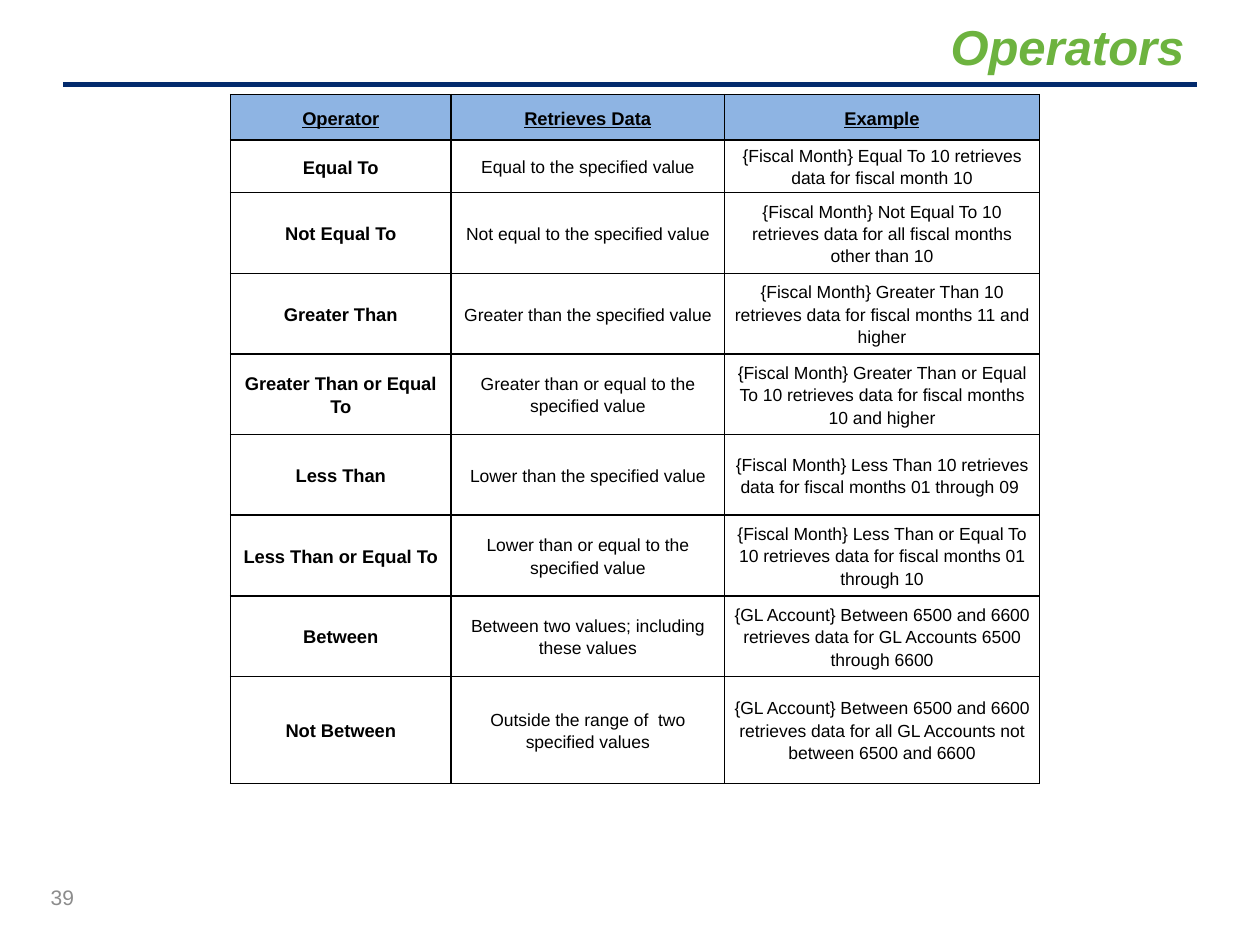
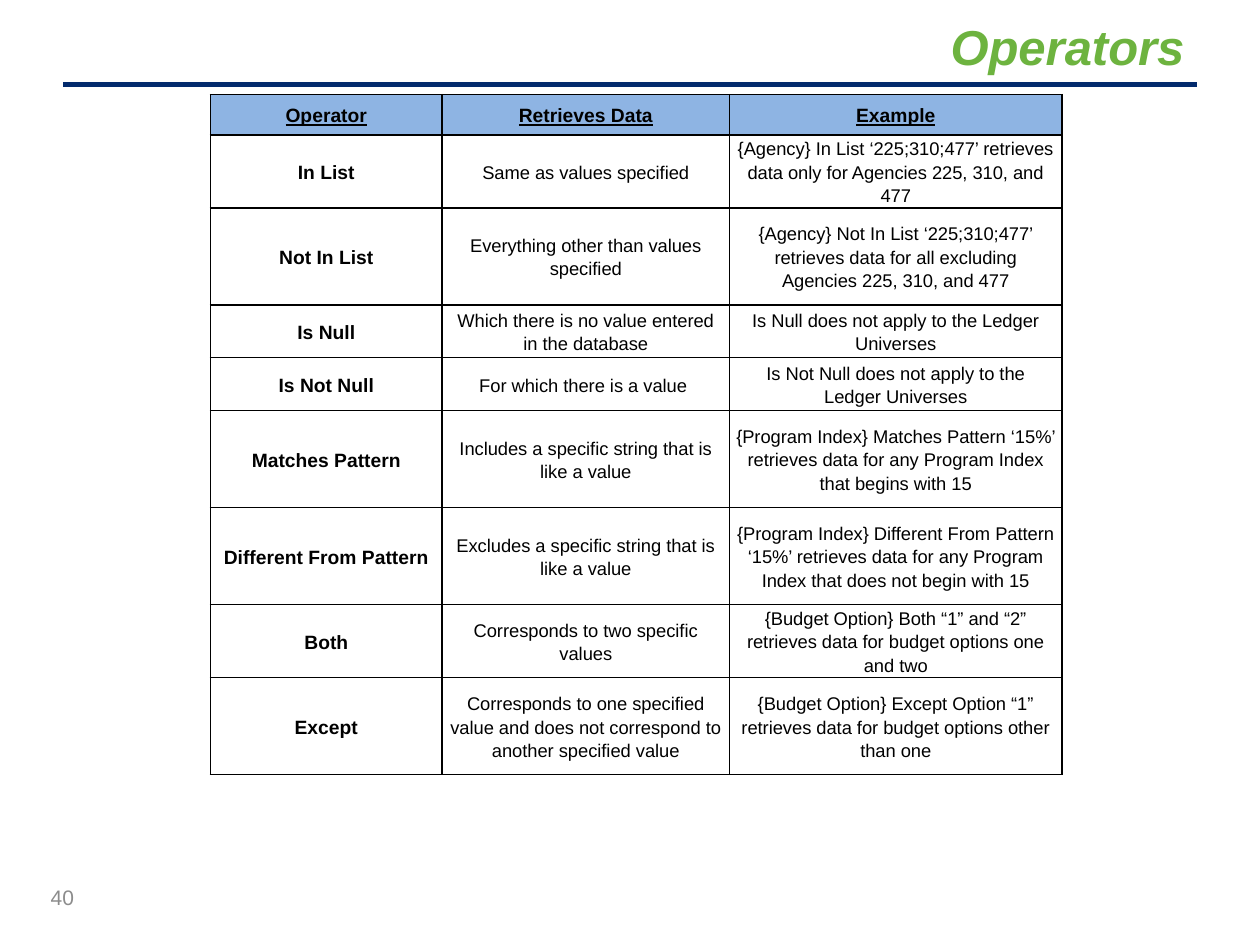
"""Builds two slides that list query operators in tables."""
from lxml import etree
from pptx import Presentation
from pptx.dml.color import RGBColor
from pptx.enum.shapes import MSO_CONNECTOR
from pptx.enum.text import MSO_ANCHOR, PP_ALIGN
from pptx.oxml.ns import qn
from pptx.util import Inches, Pt

LINE = MSO_CONNECTOR.STRAIGHT
TOP, MIDDLE = MSO_ANCHOR.TOP, MSO_ANCHOR.MIDDLE
CENTER, RIGHT = PP_ALIGN.CENTER, PP_ALIGN.RIGHT
NAVY, GREEN, BLUE, GRAY, BLACK = "032B6D", "6DB33F", "8EB4E3", "8C8C8C", "000000"
HEAD = ("Operator", "Retrieves Data", "Example")

PAGES = [
    {
        "num": "39", "left": 1.83, "size": 10,
        "cols": [1.75, 2.17, 2.5],
        "rows": [0.36, 0.42] + [0.64] * 6 + [0.85],
        "body": [
            ("Equal To", "Equal to the specified value",
             "{Fiscal Month} Equal To 10 retrieves data for fiscal month 10"),
            ("Not Equal To", "Not equal to the specified value",
             "{Fiscal Month} Not Equal To 10 retrieves data for all fiscal months other than 10"),
            ("Greater Than", "Greater than the specified value",
             "{Fiscal Month} Greater Than 10 retrieves data for fiscal months 11 and higher"),
            ("Greater Than or Equal To", "Greater than or equal to the specified value",
             "{Fiscal Month} Greater Than or Equal To 10 retrieves data for fiscal months 10 and higher"),
            ("Less Than", "Lower than the specified value",
             "{Fiscal Month} Less Than 10 retrieves data for fiscal months 01 through 09 "),
            ("Less Than or Equal To", "Lower than or equal to the specified value",
             "{Fiscal Month} Less Than or Equal To 10 retrieves data for fiscal months 01 through 10"),
            ("Between", "Between two values; including these values",
             "{GL Account} Between 6500 and 6600 retrieves data for GL Accounts 6500 through 6600"),
            ("Not Between", "Outside the range of  two specified values",
             "{GL Account} Between 6500 and 6600 retrieves data for all GL Accounts "
             "not between 6500 and 6600"),
        ],
    },
    {
        "num": "40", "left": 1.67, "size": 10.5,
        "cols": [1.84, 2.28, 2.64],
        "rows": [0.32, 0.58, 0.77, 0.42, 0.42, 0.77, 0.77, 0.58, 0.77],
        "body": [
            ("In List", "Same as values specified",
             "{Agency} In List ‘225;310;477’ retrieves data only for Agencies 225, 310, and 477"),
            ("Not In List", "Everything other than values specified",
             "{Agency} Not In List ‘225;310;477’ retrieves data for all excluding "
             "Agencies 225, 310, and 477"),
            ("Is Null", "Which there is no value entered in the database",
             "Is Null does not apply to the Ledger Universes"),
            ("Is Not Null", "For which there is a value ",
             "Is Not Null does not apply to the Ledger Universes"),
            ("Matches Pattern", "Includes a specific string that is like a value",
             "{Program Index} Matches Pattern ‘15%’ retrieves data for any Program Index "
             "that begins with 15"),
            ("Different From Pattern", "Excludes a specific string that is like a value",
             "{Program Index} Different From Pattern ‘15%’ retrieves data for any Program Index "
             "that does not begin with 15"),
            ("Both", "Corresponds to two specific values",
             "{Budget Option} Both “1” and “2” retrieves data for budget options one and two"),
            ("Except",
             "Corresponds to one specified value and does not correspond to another specified value",
             "{Budget Option} Except Option “1” retrieves data for budget options other than one"),
        ],
    },
]


def rgb(code):
    return RGBColor.from_string(code)


def write(frame, text, size, color, align, anchor):
    frame.word_wrap = True
    frame.vertical_anchor = anchor
    para = frame.paragraphs[0]
    para.text = text
    para.alignment = align
    para.font.name = "Arial"
    para.font.size = Pt(size)
    para.font.color.rgb = rgb(color)
    return para


prs = Presentation()
prs.slide_width, prs.slide_height = Inches(10), Inches(7.5)

for page in PAGES:
    slide = prs.slides.add_slide(prs.slide_layouts[5])
    shapes = slide.shapes

    rule = shapes.add_connector(LINE, Inches(0.5), Inches(0.67), Inches(9.5), Inches(0.67))
    rule.line.color.rgb = rgb(NAVY)
    rule.line.width = Pt(3)
    etree.SubElement(rule._element.spPr, qn("a:effectLst"))

    title = shapes.title
    title.left, title.top = Inches(0.5), Inches(0.08)
    title.width, title.height = Inches(9), Inches(0.75)
    para = write(title.text_frame, "Operators", 28, GREEN, RIGHT, TOP)
    para.font.bold = para.font.italic = True

    lines = [HEAD] + page["body"]
    table = shapes.add_table(
        len(lines), len(HEAD), Inches(page["left"]), Inches(0.75),
        Inches(sum(page["cols"])), Inches(sum(page["rows"]))).table
    table.first_row = table.horz_banding = False
    for col, width in zip(table.columns, page["cols"]):
        col.width = Inches(width)
    for row, height in zip(table.rows, page["rows"]):
        row.height = Inches(height)

    for r, line in enumerate(lines):
        for c, text in enumerate(line):
            cell = table.cell(r, c)
            strong = r == 0 or c == 0
            size = page["size"] + (0.5 if strong else 0)
            para = write(cell.text_frame, text, size, BLACK, CENTER, MIDDLE)
            para.line_spacing = 1.15
            para.font.bold = strong
            para.font.underline = r == 0
            cell.vertical_anchor = MIDDLE
            cell.margin_left = cell.margin_right = Inches(0.05)
            cell.margin_top = cell.margin_bottom = 0
            props = cell._tc.get_or_add_tcPr()
            for side in ("lnL", "lnR", "lnT", "lnB"):
                edge = etree.SubElement(props, qn("a:" + side), w=str(Pt(1)))
                fill = etree.SubElement(edge, qn("a:solidFill"))
                etree.SubElement(fill, qn("a:srgbClr"), val=BLACK)
            if r == 0:
                cell.fill.solid()
                cell.fill.fore_color.rgb = rgb(BLUE)
            else:
                cell.fill.background()

    box = shapes.add_textbox(Inches(0.08), Inches(6.92), Inches(0.83), Inches(0.4))
    write(box.text_frame, page["num"], 12, GRAY, CENTER, MIDDLE)

prs.save("out.pptx")
